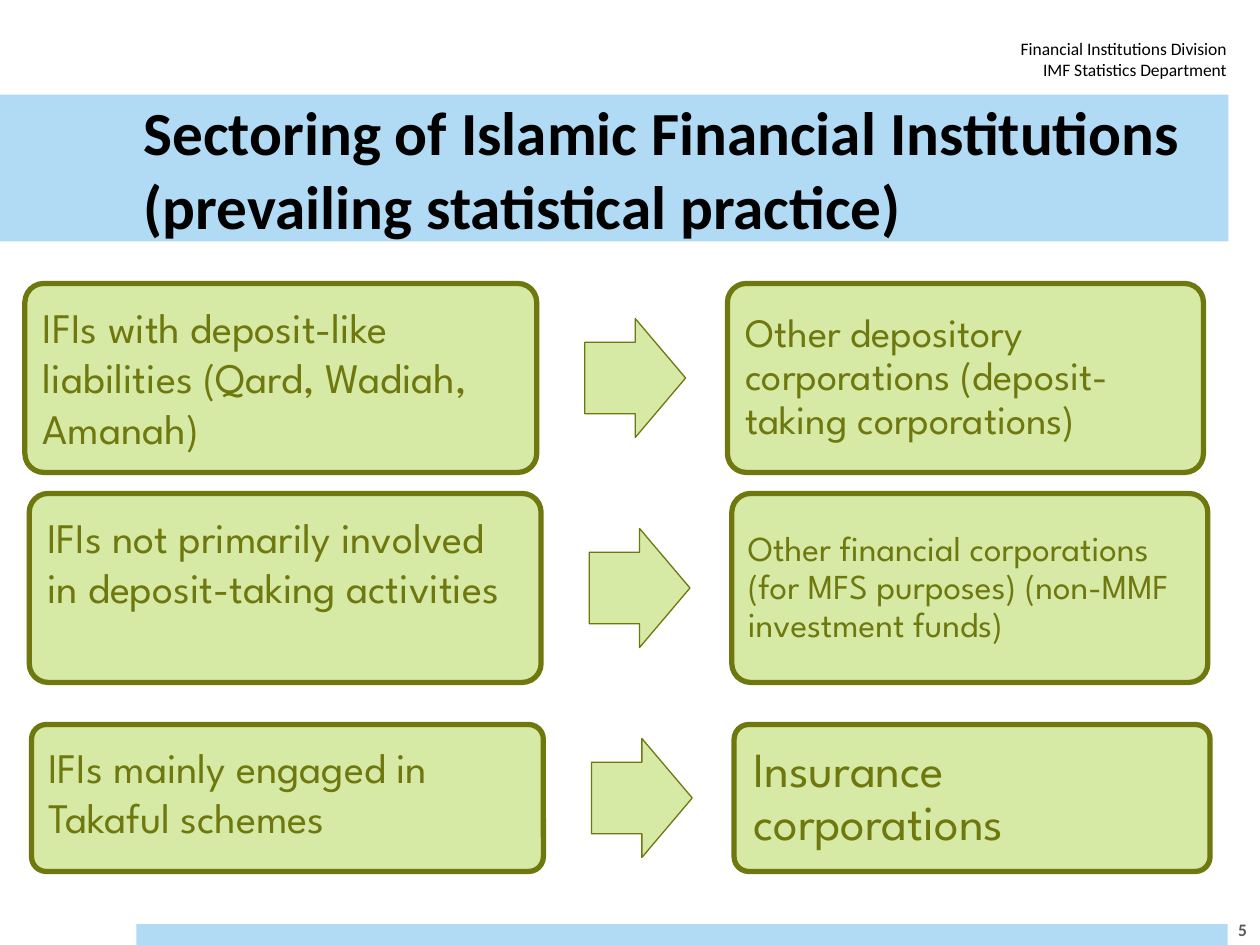
from pptx import Presentation
from pptx.dml.color import RGBColor
from pptx.enum import shapes, text
from pptx.util import Pt

BLACK = RGBColor(0x00, 0x00, 0x00)
GRAY = RGBColor(0x59, 0x59, 0x59)
BLUE = RGBColor(0xB1, 0xDA, 0xF5)
LIME = RGBColor(0xD6, 0xE9, 0xA5)
OLIVE = RGBColor(0x6E, 0x78, 0x0E)

KIND = shapes.MSO_SHAPE
ALIGN = text.PP_ALIGN
ANCHOR = text.MSO_ANCHOR


class Deck:
    body = "League Spartan"
    plain = "Calibri"

    def __init__(self, slide):
        self.slide = slide

    def shape(self, kind, box, fill, line=None, width=0):
        item = self.slide.shapes.add_shape(kind, *map(Pt, box))
        item.shadow.inherit = False
        item.fill.solid()
        item.fill.fore_color.rgb = fill
        if line is None:
            item.line.fill.background()
        else:
            item.line.color.rgb = line
            item.line.width = Pt(width)
        return item

    def letter(self, item, words, size, color, font, bold=False,
               align=ALIGN.LEFT, anchor=ANCHOR.TOP, pads=(7.2, 3.6, 7.2, 3.6),
               space=None):
        frame = item.text_frame
        frame.word_wrap = True
        frame.auto_size = text.MSO_AUTO_SIZE.NONE
        frame.vertical_anchor = anchor
        (frame.margin_left, frame.margin_top,
         frame.margin_right, frame.margin_bottom) = map(Pt, pads)
        frame.text = words
        for para in frame.paragraphs:
            para.alignment = align
            para.line_spacing = space
            para.font.name = font
            para.font.size = Pt(size)
            para.font.bold = bold
            para.font.color.rgb = color

    def title(self, box, words):
        item = self.slide.shapes.title
        item.left, item.top, item.width, item.height = map(Pt, box)
        item.fill.solid()
        item.fill.fore_color.rgb = BLUE
        self.letter(item, words, 35, BLACK, self.plain, True,
                    anchor=ANCHOR.MIDDLE, pads=(82, 3, 21.6, 3))

    def label(self, box, words, color, **style):
        item = self.slide.shapes.add_textbox(*map(Pt, box))
        self.letter(item, words, 10, color, self.plain, **style)

    def card(self, box, words, size, pad, **style):
        item = self.shape(KIND.ROUNDED_RECTANGLE, box, LIME, OLIVE, 3)
        item.adjustments[0] = 0.1
        self.letter(item, words, size, OLIVE, self.body, pads=[pad] * 4, **style)

    def arrow(self, box):
        item = self.shape(KIND.RIGHT_ARROW, box, LIME, OLIVE, 0.75)
        item.adjustments[0] = 0.6
        item.adjustments[1] = 0.5

    def row(self, left, top, high, source, target, size, pad):
        self.card((left, top, 292.5, high), source, 24, 7.2)
        self.arrow((left + 320, top + (high - 68) / 2, 57.6, 68))
        self.card((left + 401.5, top, 272, high), target, size, pad,
                  anchor=ANCHOR.MIDDLE, space=0.9)


ROWS = [
    (14.2, 162, 108, "IFIs with deposit-like liabilities (Qard, Wadiah, Amanah)",
     "Other depository corporations (deposit-taking corporations)", 23, 7.2),
    (16.7, 282, 108, "IFIs not primarily involved in deposit-taking activities",
     "Other financial corporations (for MFS purposes) "
     "(non-MMF investment funds)", 20, 6),
    (18, 414, 84, "IFIs mainly engaged in Takaful schemes",
     "Insurance corporations", 28, 8.6),
]


def main():
    show = Presentation()
    show.slide_width, show.slide_height = Pt(720), Pt(540)
    deck = Deck(show.slides.add_slide(show.slide_layouts[5]))
    deck.shape(KIND.RECTANGLE, (78, 528, 623.5, 12), BLUE)
    deck.label((534, 18, 174, 32),
               "Financial Institutions Division\nIMF Statistics Department",
               BLACK, align=ALIGN.RIGHT)
    deck.title((0, 54, 702, 84),
               "Sectoring of Islamic Financial Institutions "
               "(prevailing statistical practice)")
    deck.label((692, 516, 36, 30), "5", GRAY, bold=True,
               align=ALIGN.CENTER, anchor=ANCHOR.MIDDLE)
    for row in ROWS:
        deck.row(*row)
    show.save("out.pptx")


if __name__ == "__main__":
    main()
